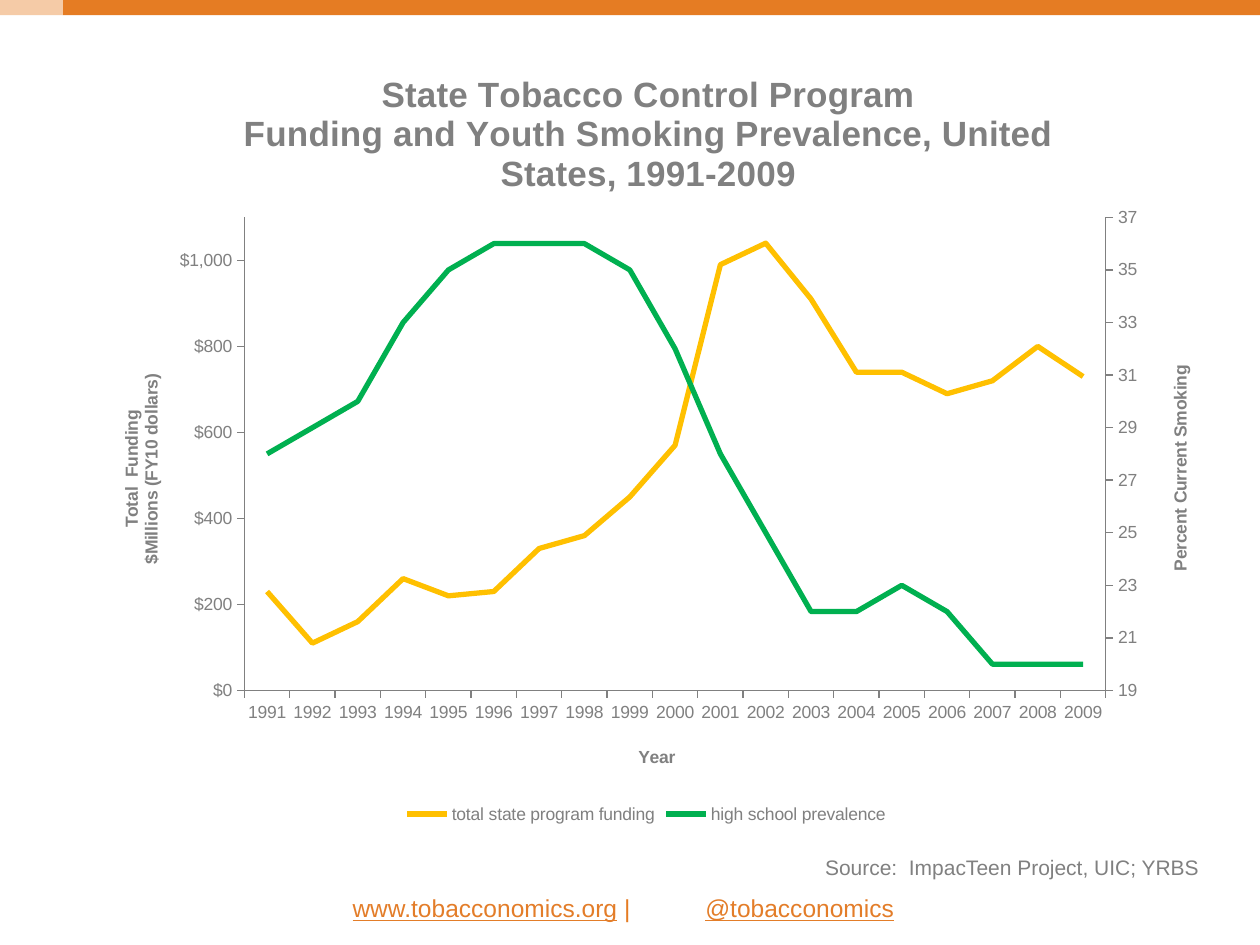
import copy
from dataclasses import dataclass

import lxml.etree
import pptx
import pptx.chart.axis
import pptx.chart.data
import pptx.dml.color
import pptx.enum.chart
import pptx.enum.shapes
import pptx.oxml.ns
import pptx.util
from pptx.util import Inches

ORANGE = pptx.dml.color.RGBColor(0xE5, 0x7C, 0x23)
LINK_ORANGE = pptx.dml.color.RGBColor(0xE3, 0x7D, 0x29)
PEACH = pptx.dml.color.RGBColor(0xF5, 0xCB, 0xA7)
GRAY = pptx.dml.color.RGBColor(0x80, 0x80, 0x80)
YELLOW = pptx.dml.color.RGBColor(0xFF, 0xC0, 0x00)
GREEN = pptx.dml.color.RGBColor(0x00, 0xB0, 0x50)
FONT = "Arial"
qn = pptx.oxml.ns.qn


@dataclass
class Bar:
    left: float
    width: float
    color: pptx.dml.color.RGBColor


@dataclass
class Series:
    name: str
    values: list[int]
    color: pptx.dml.color.RGBColor


@dataclass
class ValueScale:
    title: str
    minimum: int
    maximum: int
    step: int
    number_format: str
    x: float
    y: float


BARS = [Bar(0.5, 9.5, ORANGE), Bar(0, 0.5, PEACH)]
YEARS = [str(year) for year in range(1991, 2010)]
SERIES = [
    Series("total state program funding",
           [230, 110, 160, 260, 220, 230, 330, 360, 450, 570,
            990, 1040, 910, 740, 740, 690, 720, 800, 730], YELLOW),
    Series("high school prevalence",
           [28, 29, 30, 33, 35, 36, 36, 36, 35, 32,
            28, 25, 22, 22, 23, 22, 20, 20, 20], GREEN),
]
FUNDING = ValueScale("Total  Funding\n$Millions (FY10 dollars)", 0, 1100, 200,
                     "[$$-409]#,##0", 0.03, 0.42)
SMOKING = ValueScale("Percent Current Smoking", 19, 37, 2, "General", 0.96, 0.41)


def add_run(paragraph, text: str, *, size: float, color=GRAY,
            bold: bool = False, underline: bool = False) -> None:
    run = paragraph.add_run()
    run.text = text
    run.font.name = FONT
    run.font.size = pptx.util.Pt(size)
    run.font.color.rgb = color
    run.font.bold = bold
    run.font.underline = underline


def add_bar(slide, bar: Bar) -> None:
    shape = slide.shapes.add_shape(
        pptx.enum.shapes.MSO_SHAPE.RECTANGLE,
        Inches(bar.left), Inches(0), Inches(bar.width), Inches(0.12))
    shape.shadow.inherit = False
    shape.fill.solid()
    shape.fill.fore_color.rgb = bar.color
    shape.line.fill.background()


def add_text_box(slide, left: float, top: float, width: float, height: float):
    box = slide.shapes.add_textbox(
        Inches(left), Inches(top), Inches(width), Inches(height))
    box.text_frame.word_wrap = True
    return box.text_frame.paragraphs[0]


def place(element, index: int, **fractions) -> None:
    layout = element.find(qn("c:layout"))
    if layout is None:
        layout = lxml.etree.Element(qn("c:layout"))
        element.insert(index, layout)
    for child in list(layout):
        layout.remove(child)
    manual = lxml.etree.SubElement(layout, qn("c:manualLayout"))
    for name, value in fractions.items():
        lxml.etree.SubElement(manual, qn(f"c:{name}")).set("val", str(value))


def set_title(owner, title_object, text: str, x: float, y: float,
              size: float = 10, rotated: bool = False) -> None:
    frame = title_object.text_frame
    for index, line in enumerate(text.split("\n")):
        paragraph = frame.add_paragraph() if index else frame.paragraphs[0]
        add_run(paragraph, line, size=size, bold=True)
    if rotated:
        body = frame._txBody.find(qn("a:bodyPr"))
        body.set("rot", "-5400000")
        body.set("vert", "horz")
    place(owner.find(qn("c:title")), 1, xMode="edge", yMode="edge", x=x, y=y)


def format_axis(axis) -> None:
    axis.has_major_gridlines = False
    axis.major_tick_mark = pptx.enum.chart.XL_TICK_MARK.OUTSIDE
    axis.minor_tick_mark = pptx.enum.chart.XL_TICK_MARK.NONE
    axis.format.line.color.rgb = GRAY
    axis.format.line.width = pptx.util.Pt(0.75)
    axis.tick_labels.font.size = pptx.util.Pt(10)
    axis.tick_labels.font.color.rgb = GRAY


def format_value_axis(element, scale: ValueScale) -> None:
    axis = pptx.chart.axis.ValueAxis(element)
    format_axis(axis)
    axis.minimum_scale = scale.minimum
    axis.maximum_scale = scale.maximum
    axis.major_unit = scale.step
    axis.tick_labels.number_format = scale.number_format
    axis.tick_labels.number_format_is_linked = False
    set_title(element, axis.axis_title, scale.title, scale.x, scale.y, rotated=True)


def add_right_axis(plot_area):
    left_lines = plot_area.find(qn("c:lineChart"))
    right_lines = copy.deepcopy(left_lines)
    left_lines.remove(left_lines.findall(qn("c:ser"))[1])
    right_lines.remove(right_lines.findall(qn("c:ser"))[0])
    left_lines.addnext(right_lines)
    category_axis = copy.deepcopy(plot_area.find(qn("c:catAx")))
    value_axis = copy.deepcopy(plot_area.find(qn("c:valAx")))
    plot_area.find(qn("c:valAx")).addnext(value_axis)
    value_axis.addnext(category_axis)
    for reference, number in zip(right_lines.findall(qn("c:axId")), ("5001", "5002")):
        reference.set("val", number)
    for axis, number, crossing in ((category_axis, "5001", "5002"),
                                   (value_axis, "5002", "5001")):
        axis.find(qn("c:axId")).set("val", number)
        axis.find(qn("c:crossAx")).set("val", crossing)
    category_axis.find(qn("c:delete")).set("val", "1")
    value_axis.find(qn("c:axPos")).set("val", "r")
    value_axis.find(qn("c:crosses")).set("val", "max")
    return value_axis


def add_funding_chart(slide) -> None:
    data = pptx.chart.data.CategoryChartData()
    data.categories = YEARS
    for series in SERIES:
        data.add_series(series.name, series.values)
    chart = slide.shapes.add_chart(
        pptx.enum.chart.XL_CHART_TYPE.LINE,
        Inches(0.65), Inches(0.3), Inches(8.96), Inches(6.28), data).chart
    chart.font.name = FONT
    chart.font.size = pptx.util.Pt(10)
    chart.font.color.rgb = GRAY
    chart.plots[0].vary_by_categories = False
    for line, series in zip(chart.plots[0].series, SERIES):
        line.smooth = False
        line.marker.style = pptx.enum.chart.XL_MARKER_STYLE.NONE
        line.format.line.color.rgb = series.color
        line.format.line.width = pptx.util.Pt(3)
    chart_element = chart._chartSpace.find(qn("c:chart"))
    plot_area = chart_element.find(qn("c:plotArea"))
    right_axis = add_right_axis(plot_area)
    format_value_axis(plot_area.find(qn("c:valAx")), FUNDING)
    format_value_axis(right_axis, SMOKING)
    format_axis(chart.category_axis)
    set_title(plot_area.find(qn("c:catAx")), chart.category_axis.axis_title,
              "Year", 0.49, 0.89)
    set_title(chart_element, chart.chart_title,
              "State Tobacco Control Program\n"
              "Funding and Youth Smoking Prevalence, United States, 1991-2009",
              0.14, 0.04, size=20)
    place(plot_area, 0, layoutTarget="inner", xMode="edge", yMode="edge",
          x=0.144, y=0.227, w=0.763, h=0.598)
    chart.has_legend = True
    chart.legend.position = pptx.enum.chart.XL_LEGEND_POSITION.BOTTOM
    chart.legend.include_in_layout = False


def add_footer(slide) -> None:
    paragraph = add_text_box(slide, 2.7, 7.04, 5, 0.34)
    tabs = lxml.etree.SubElement(paragraph._p.get_or_add_pPr(), qn("a:tabLst"))
    lxml.etree.SubElement(tabs, qn("a:tab"), pos=str(Inches(2.8)), algn="l")
    add_run(paragraph, "www.tobacconomics.org", size=14, color=LINK_ORANGE, underline=True)
    add_run(paragraph, " |\t", size=14, color=ORANGE)
    add_run(paragraph, "@tobacconomics", size=14, color=LINK_ORANGE, underline=True)


def main() -> None:
    presentation = pptx.Presentation()
    presentation.slide_width, presentation.slide_height = Inches(10), Inches(7.5)
    slide = presentation.slides.add_slide(presentation.slide_layouts[6])
    for bar in BARS:
        add_bar(slide, bar)
    add_run(add_text_box(slide, 6.45, 6.73, 3.29, 0.3),
            "Source:  ImpacTeen Project, UIC; YRBS", size=12)
    add_funding_chart(slide)
    add_footer(slide)
    presentation.save("out.pptx")


if __name__ == "__main__":
    main()
